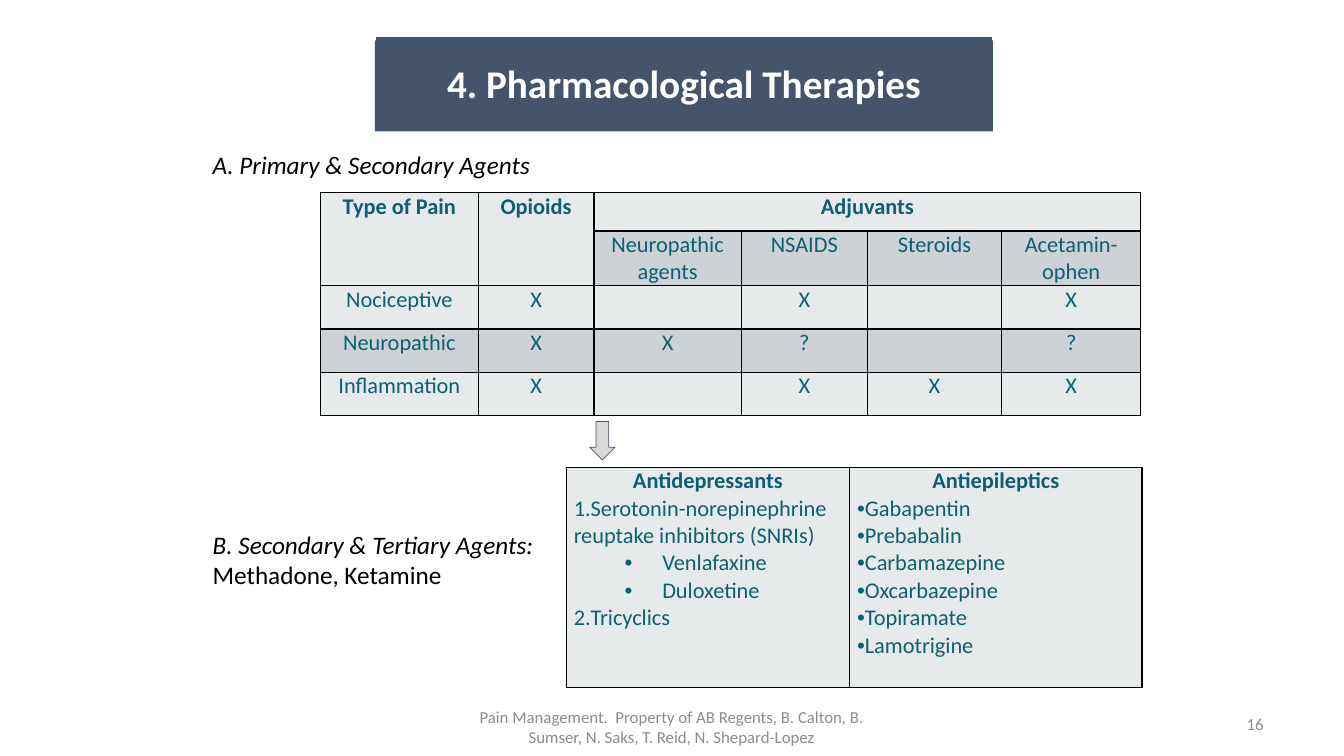
"""Build the slide on pharmacological therapies for pain."""
import pptx
import pptx.util
import pptx.dml.color
import pptx.enum.shapes
import pptx.enum.text
import lxml.etree

Cm, Pt = pptx.util.Cm, pptx.util.Pt
ALIGN = pptx.enum.text.PP_ALIGN
ANCHOR = pptx.enum.text.MSO_ANCHOR
SHAPE = pptx.enum.shapes.MSO_SHAPE
NS = "http://schemas.openxmlformats.org/drawingml/2006/main"
HUES = {"navy": "44546A", "teal": "0D6072", "pale": "E7EAEB", "mist": "CCD2D5",
        "grey": "D9D9D9", "note": "8C8C8C", "black": "000000", "white": "FFFFFF"}
FONTS = {
    "title": {"size": Pt(28), "bold": True, "color": "white"},
    "label": {"size": Pt(18), "italic": True, "color": "black"},
    "plain": {"size": Pt(18), "italic": False, "color": "black"},
    "head": {"size": Pt(16), "bold": True, "color": "teal"},
    "body": {"size": Pt(16), "bold": False, "color": "teal"},
    "foot": {"size": Pt(12), "color": "note"},
}
MARKS = {"num": (0, 0, 0, "buAutoNum", {"type": "arabicPeriod"}),
         "dot": (0, 0, 0, "buChar", {"char": "•"}),
         "sub": (1, 2.23, -0.95, "buChar", {"char": "•"})}


def rgb(hue):
    return pptx.dml.color.RGBColor.from_string(HUES[hue])


def put(item, looks):
    for name, value in looks.items():
        setattr(item, name, value)


def node(home, tag, **attrs):
    return lxml.etree.SubElement(home, f"{{{NS}}}{tag}", attrs)


class Deck:
    """Hold the text styles and the current slide."""

    def __init__(self, wide, high):
        self.file = pptx.Presentation()
        put(self.file, {"slide_width": Cm(wide), "slide_height": Cm(high)})
        self.slide = self.file.slides.add_slide(self.file.slide_layouts[5])
        self.shapes = self.slide.shapes

    def say(self, para, text, style):
        run = para.add_run()
        run.text = text
        looks = dict(FONTS[style], name="Calibri")
        run.font.color.rgb = rgb(looks.pop("color"))
        put(run.font, looks)

    def mark(self, para, kind):
        level, left, dent, tag, attrs = MARKS[kind]
        para.level = level
        props = para._p.get_or_add_pPr()
        props.set("marL", str(Cm(left)))
        props.set("indent", str(Cm(dent)))
        if tag == "buChar":
            node(props, "buFont", typeface="Arial")
        node(props, tag, **attrs)

    def title(self, spot, text):
        title = self.shapes.title
        put(title, dict(zip(("left", "top", "width", "height"), map(Cm, spot))))
        title.fill.solid()
        title.fill.fore_color.rgb = rgb("navy")
        edge = Cm(0.05)
        put(title.text_frame, {
            "vertical_anchor": ANCHOR.MIDDLE, "word_wrap": True,
            "auto_size": pptx.enum.text.MSO_AUTO_SIZE.NONE,
            "margin_left": edge, "margin_right": edge,
            "margin_top": edge, "margin_bottom": edge})
        para = title.text_frame.paragraphs[0]
        put(para, {"alignment": ALIGN.CENTER, "line_spacing": 0.9})
        self.say(para, text, "title")
        self.shapes.element.append(title.element)

    def shape(self, kind, spot, fill, line, width):
        shape = self.shapes.add_shape(kind, *map(Cm, spot))
        shape.shadow.inherit = False
        shape.fill.solid()
        shape.fill.fore_color.rgb = rgb(fill)
        shape.line.color.rgb = rgb(line)
        shape.line.width = Pt(width)

    def text(self, spot, runs, align=ALIGN.LEFT, anchor=ANCHOR.TOP):
        frame = self.shapes.add_textbox(*map(Cm, spot)).text_frame
        put(frame, {"word_wrap": True, "vertical_anchor": anchor})
        para = frame.paragraphs[0]
        para.alignment = align
        for words, style in runs:
            self.say(para, words, style)

    def cell(self, cell, paras, fill):
        put(cell, {"margin_left": Cm(0.19), "margin_right": Cm(0.19),
                   "margin_top": 0, "margin_bottom": 0})
        cell.fill.solid()
        cell.fill.fore_color.rgb = rgb(fill)
        props = cell._tc.get_or_add_tcPr()
        for place, side in enumerate("LRTB"):
            line = node(props, f"ln{side}", w=str(Pt(1)))
            node(node(line, "solidFill"), "srgbClr", val=HUES["black"])
            props.insert(place, line)
        for place, (words, kind) in enumerate(paras):
            frame = cell.text_frame
            para = frame.add_paragraph() if place else frame.paragraphs[0]
            if kind in MARKS:
                para.alignment = ALIGN.LEFT
                self.mark(para, kind)
            else:
                para.alignment = ALIGN.CENTER
            self.say(para, words, "head" if kind == "head" else "body")

    def table(self, left, top, cols, rows, data, fills, spans=()):
        spot = map(Cm, (left, top, sum(cols), sum(rows)))
        table = self.shapes.add_table(len(rows), len(cols), *spot).table
        for col, wide in zip(table.columns, cols):
            col.width = Cm(wide)
        for row, high in zip(table.rows, rows):
            row.height = Cm(high)
        for r, line in enumerate(data):
            for c, paras in enumerate(line):
                self.cell(table.cell(r, c), paras, fills[r])
        for start, end in spans:
            table.cell(*start).merge(table.cell(*end))


def main():
    deck = Deck(33.87, 19.05)
    deck.shape(SHAPE.RECTANGLE, (9.45, 0.91, 15.57, 2.29), "navy", "white", 1)
    deck.title((9.45, 1.02, 15.57, 2.29), "4. Pharmacological Therapies")

    heads = ["Type of Pain", "Opioids", "Adjuvants", "", "", ""]
    agents = [
        ["", "", "Neuropathic agents", "NSAIDS", "Steroids", "Acetamin-ophen"],
        ["Nociceptive", "X", "", "X", "", "X"],
        ["Neuropathic", "X", "X", "?", "", "?"],
        ["Inflammation", "X", "", "X", "X", "X"]]
    grid = [[[(word, kind)] if word else [] for word in line]
            for line, kind in [(heads, "head")] + [(row, "body") for row in agents]]
    deck.table(8.08, 4.86, (3.97, 2.92, 3.71, 3.18, 3.38, 3.51),
               (0.96, 1.38, 1.09, 1.09, 1.09), grid,
               ("pale", "mist", "pale", "mist", "pale"),
               (((0, 0), (1, 0)), ((0, 1), (1, 1)), ((0, 2), (0, 5))))

    calm = [("Antidepressants", "head"),
            ("Serotonin-norepinephrine reuptake inhibitors (SNRIs)", "num"),
            ("Venlafaxine", "sub"), ("Duloxetine", "sub"), ("Tricyclics", "num")]
    drugs = ("Gabapentin", "Prebabalin", "Carbamazepine", "Oxcarbazepine",
             "Topiramate", "Lamotrigine")
    nerve = [("Antiepileptics", "head")] + [(drug, "dot") for drug in drugs]
    deck.table(14.27, 11.78, (7.14, 7.37), (5.54,), [[calm, nerve]], ("pale",))

    deck.shape(SHAPE.DOWN_ARROW, (14.86, 10.62, 0.64, 0.97), "grey", "navy", 0.5)
    deck.text((5.11, 3.63, 8.9, 1.02), [("A. Primary & Secondary Agents", "label")])
    deck.text((5.11, 13.21, 8.71, 1.8),
              [("B. Secondary & Tertiary Agents:", "label"),
               (" Methadone, Ketamine", "plain")])
    deck.text((31.17, 17.73, 2.54, 1.02), [("16", "foot")], anchor=ANCHOR.MIDDLE)
    deck.text((11.45, 17.8, 10.96, 1.02),
              [("Pain Management.  Property of AB Regents, B. Calton, B. "
                "Sumser, N. Saks, T. Reid, N. Shepard-Lopez", "foot")],
              ALIGN.CENTER, ANCHOR.MIDDLE)
    deck.file.save("out.pptx")


if __name__ == "__main__":
    main()
